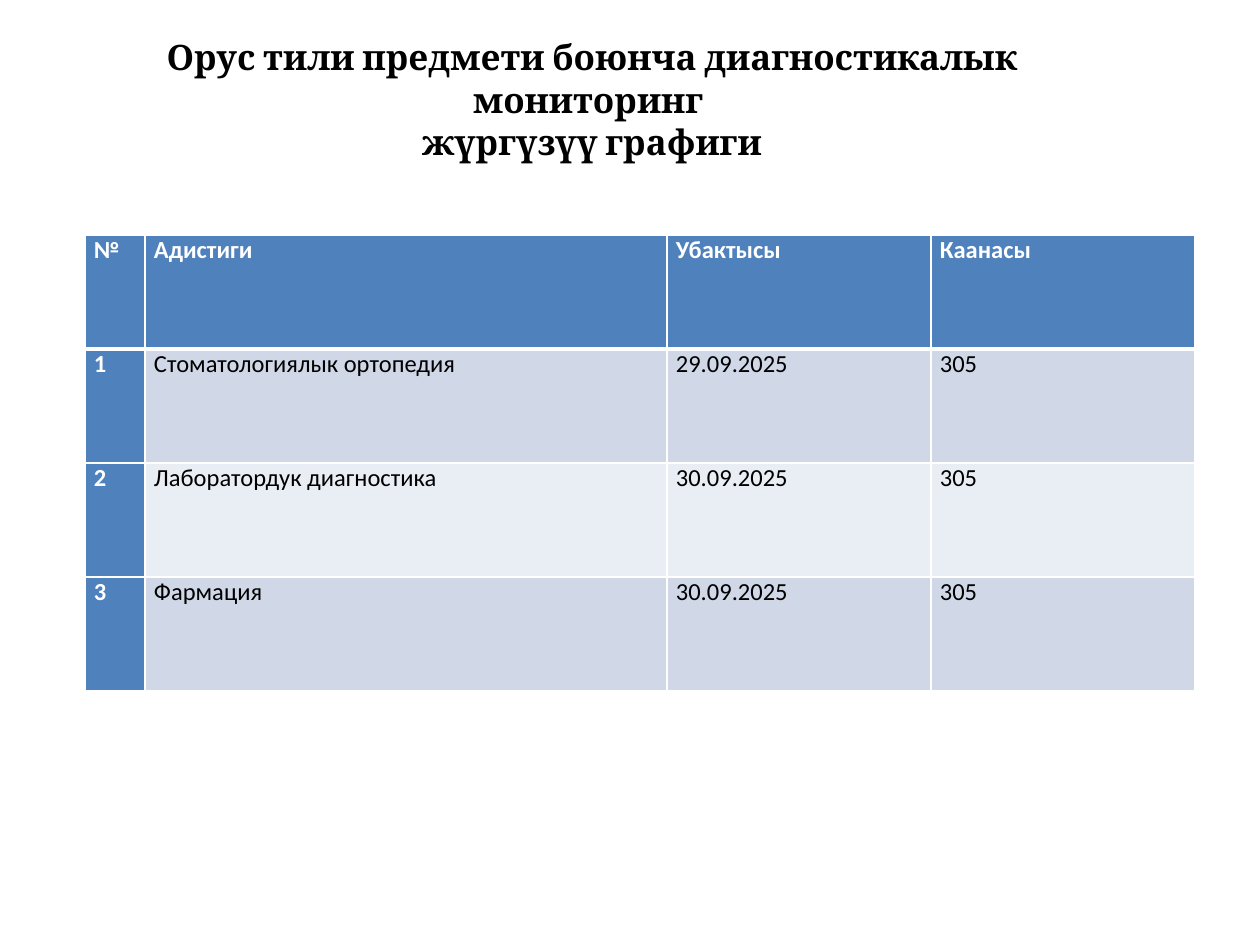
from pptx import Presentation
from pptx.dml.color import RGBColor
from pptx.enum.text import MSO_ANCHOR, MSO_AUTO_SIZE, PP_ALIGN
from pptx.oxml.ns import qn
from pptx.util import Pt
from lxml.etree import SubElement

PX = 914400 // 126
TITLE = ["Орус тили предмети боюнча диагностикалык мониторинг ", "жүргүзүү графиги"]
ROWS = [
    ("№", "Адистиги", "Убактысы", "Каанасы"),
    ("1", "Стоматологиялык ортопедия", "29.09.2025", "305"),
    ("2", "Лаборатордук диагностика", "30.09.2025", "305"),
    ("3", "Фармация", "30.09.2025", "305"),
]
COLS = [60, 522, 264, 264]
ROW_H = 114
LEFT, TOP = 85, 235
ACCENT, BANDS = "4F81BD", ("E9EDF4", "D0D8E8")
WHITE, BLACK = "FFFFFF", "000000"


def px(n):
    return n * PX


def rgb(color):
    return RGBColor.from_string(color)


def add_run(p, text, font, size, color, bold):
    r = p.add_run()
    r.text = text
    r.font.name, r.font.size, r.font.bold = font, Pt(size), bold
    r.font.color.rgb = rgb(color)


def add_borders(cell, widths):
    tc_pr = cell._tc.get_or_add_tcPr()
    for i, (side, width) in enumerate(widths.items()):
        ln = SubElement(tc_pr, qn(f"a:ln{side}"), w=str(Pt(width)))
        fill = SubElement(ln, qn("a:solidFill"))
        SubElement(fill, qn("a:srgbClr"), val=WHITE)
        tc_pr.remove(ln)
        tc_pr.insert(i, ln)


def add_title(slide):
    sp = slide.shapes.title
    sp.left, sp.top, sp.width, sp.height = px(63), px(49), px(1058), px(136)
    tf = sp.text_frame
    tf.word_wrap, tf.auto_size = True, MSO_AUTO_SIZE.NONE
    tf.vertical_anchor = MSO_ANCHOR.MIDDLE
    tf.margin_top, tf.margin_bottom = px(6), px(42)
    p = tf.paragraphs[0]
    p.alignment = PP_ALIGN.CENTER
    for i, line in enumerate(TITLE):
        if i:
            p.add_line_break()
        add_run(p, line, "Cambria", 20, BLACK, True)


def add_schedule(slide):
    table = slide.shapes.add_table(
        len(ROWS), len(COLS), px(LEFT), px(TOP), px(sum(COLS)), px(ROW_H * len(ROWS))
    ).table
    table.first_col = True
    for col, width in zip(table.columns, COLS):
        col.width = px(width)
    for i, row in enumerate(ROWS):
        table.rows[i].height = px(ROW_H)
        for j, text in enumerate(row):
            cell = table.cell(i, j)
            head = i == 0 or j == 0
            cell.margin_left = cell.margin_right = px(9)
            cell.margin_top = cell.margin_bottom = 0
            cell.fill.solid()
            cell.fill.fore_color.rgb = rgb(ACCENT if head else BANDS[i % 2])
            add_run(cell.text_frame.paragraphs[0], text, "Calibri", 14,
                    WHITE if head else BLACK, head)
            add_borders(cell, {"L": 1, "R": 1, "T": 3 if i == 1 else 1,
                               "B": 3 if i == 0 else 1})


def main():
    """Build the slide with the monitoring schedule."""
    prs = Presentation()
    prs.slide_width, prs.slide_height = px(1260), px(945)
    slide = prs.slides.add_slide(prs.slide_layouts[5])
    add_schedule(slide)
    add_title(slide)
    prs.save("out.pptx")


if __name__ == "__main__":
    main()
